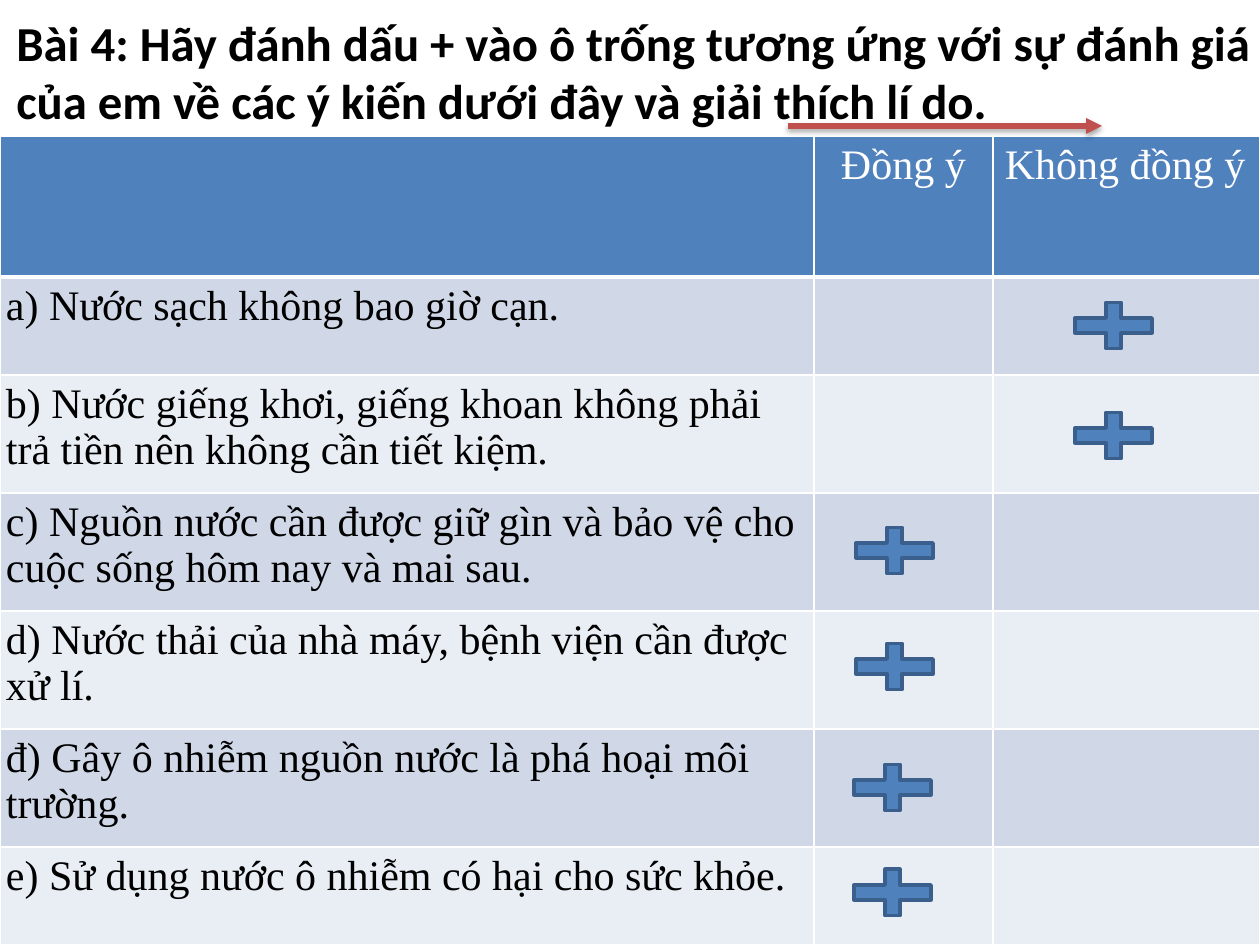
from lxml import etree
from pptx import Presentation
from pptx.dml.color import RGBColor
from pptx.enum.shapes import MSO_CONNECTOR, MSO_SHAPE
from pptx.enum.text import MSO_ANCHOR
from pptx.oxml.ns import qn
from pptx.util import Pt

PX = 914400 // 126
LINE = MSO_CONNECTOR.STRAIGHT
PLUS = MSO_SHAPE.MATH_PLUS
MIDDLE = MSO_ANCHOR.MIDDLE
HEX = {
    "black": "000000", "white": "FFFFFF", "blue": "4F81BD", "edge": "3A5F8C",
    "red": "C0504D", "odd": "D0D8E8", "even": "E9EDF4",
}
TITLE = ("Bài 4: Hãy đánh dấu + vào ô trống tương ứng với sự đánh giá "
         "của em về các ý kiến dưới đây và giải thích lí do.")
ROWS = [
    ["", "Đồng ý", "Không đồng ý"],
    ["a) Nước sạch không bao giờ cạn."],
    ["b) Nước giếng khơi, giếng khoan không phải trả tiền nên không cần tiết kiệm."],
    ["c) Nguồn nước cần được giữ gìn và bảo vệ cho cuộc sống hôm nay và mai sau."],
    ["d) Nước thải của nhà máy, bệnh viện cần được xử lí."],
    ["đ) Gây ô nhiễm nguồn nước là phá hoại môi trường."],
    ["e) Sử dụng nước ô nhiễm có hại cho sức khỏe."],
]
WIDTHS = [814, 179, 267]
HEIGHTS = [141, 98, 118, 118, 118, 118, 98]
HEAD_PADS = [6, 27, 12]
MARKS = [(1061, 294), (1061, 404), (842, 519), (842, 635), (840, 756), (840, 861)]


def px(n):
    return n * PX


def color(name):
    return RGBColor.from_string(HEX[name])


def add(parent, tag, **attrs):
    node = etree.SubElement(parent, qn(tag))
    for key, value in attrs.items():
        node.set(key, str(value))
    return node


class Page:
    def __init__(self, deck):
        self.slide = deck.slides.add_slide(deck.slide_layouts[6])
        self.shapes = self.slide.shapes

    def text(self, frame, words, font, size, tone, bold=False):
        run = frame.paragraphs[0].add_run()
        run.text = words
        run.font.name = font
        run.font.size = Pt(size)
        run.font.bold = bold
        run.font.color.rgb = color(tone)

    def title(self, words, x, y, w, h):
        frame = self.shapes.add_textbox(px(x), px(y), px(w), px(h)).text_frame
        frame.word_wrap = True
        frame.vertical_anchor = MIDDLE
        self.text(frame, words, "Calibri", 27.9, "black", True)

    def border(self, cell, head):
        props = cell._tc.get_or_add_tcPr()
        for at, side in enumerate(("a:lnL", "a:lnR", "a:lnT", "a:lnB")):
            wide = Pt(3 if head and side == "a:lnB" else 1)
            line = etree.Element(qn(side), w=str(int(wide)))
            add(add(line, "a:solidFill"), "a:srgbClr", val=HEX["white"])
            props.insert(at, line)

    def table(self, rows, x, y):
        grid = self.shapes.add_table(len(rows), len(WIDTHS), px(x), px(y),
                                     px(sum(WIDTHS)), px(sum(HEIGHTS))).table
        for col, w in zip(grid.columns, WIDTHS):
            col.width = px(w)
        for r, texts in enumerate(rows):
            grid.rows[r].height = px(HEIGHTS[r])
            head = r == 0
            tone = "blue" if head else "odd" if r % 2 else "even"
            for c in range(len(WIDTHS)):
                cell = grid.cell(r, c)
                cell.fill.solid()
                cell.fill.fore_color.rgb = color(tone)
                self.border(cell, head)
                cell.margin_left = px(HEAD_PADS[c] if head else 6)
                cell.margin_right = cell.margin_top = cell.margin_bottom = px(6)
                if c < len(texts) and texts[c]:
                    self.text(cell.text_frame, texts[c], "Times New Roman", 24,
                              "white" if head else "black")

    def plus(self, x, y):
        mark = self.shapes.add_shape(PLUS, px(x), px(y), px(105), px(63))
        mark.shadow.inherit = False
        mark.fill.solid()
        mark.fill.fore_color.rgb = color("blue")
        mark.line.color.rgb = color("edge")
        mark.line.width = Pt(2)

    def arrow(self, x, y, end):
        line = self.shapes.add_connector(LINE, px(x), px(y), px(end), px(y))
        line.line.color.rgb = color("red")
        line.line.width = Pt(3)
        add(line.line._get_or_add_ln(), "a:tailEnd", type="triangle")
        glow = add(add(line._element.spPr, "a:effectLst"), "a:outerShdw",
                   blurRad=int(Pt(3.1)), dist=int(Pt(1.8)), dir=5400000,
                   rotWithShape=0)
        add(add(glow, "a:srgbClr", val=HEX["black"]), "a:alpha", val=35000)


def main():
    deck = Presentation()
    deck.slide_width, deck.slide_height = px(1260), px(945)
    page = Page(deck)
    page.title(TITLE, 4, 8, 1260, 126)
    page.table(ROWS, 0, 136)
    for x, y in MARKS:
        page.plus(x, y)
    page.arrow(788, 126, 1102)
    deck.save("out.pptx")


if __name__ == "__main__":
    main()
